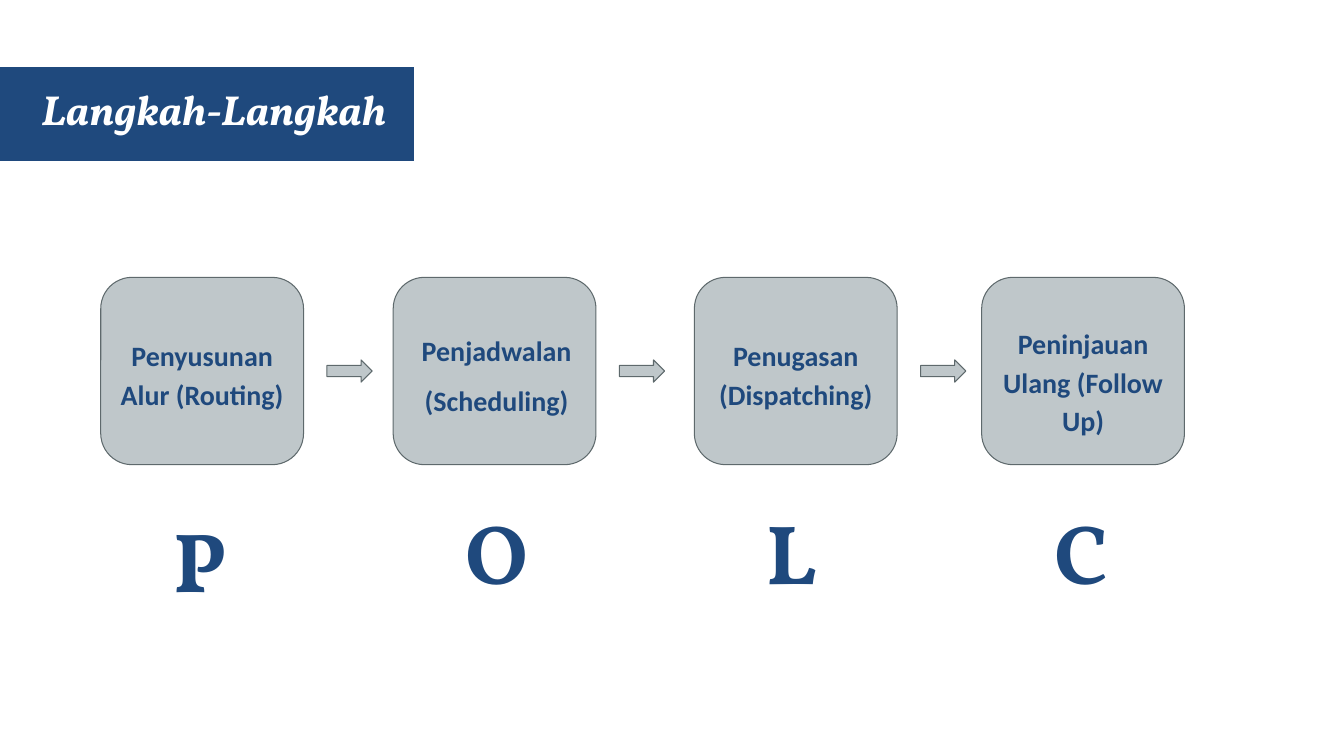
"""Build a slide showing the four production control steps and their POLC letters."""

from dataclasses import dataclass

import pptx
import pptx.dml.color
import pptx.enum.shapes
import pptx.enum.text
import pptx.shapes.autoshape
import pptx.slide
import pptx.text.text
import pptx.util

Cm = pptx.util.Cm
Pt = pptx.util.Pt
RGBColor = pptx.dml.color.RGBColor
ShapeKind = pptx.enum.shapes.MSO_SHAPE
Align = pptx.enum.text.PP_ALIGN
AutoSize = pptx.enum.text.MSO_AUTO_SIZE


@dataclass(frozen=True)
class Theme:
    navy: RGBColor = RGBColor(0x1F, 0x49, 0x7D)
    white: RGBColor = RGBColor(0xFF, 0xFF, 0xFF)
    grey: RGBColor = RGBColor(0xBF, 0xC7, 0xCA)
    outline: RGBColor = RGBColor(0x5E, 0x69, 0x6C)
    display_font: str = "Vollkorn"
    label_font: str = "Calibri"
    title_size: int = 30
    label_size: int = 20
    letter_size: int = 60
    line_width: float = 0.75


@dataclass(frozen=True)
class Box:
    left: float
    top: float
    width: float
    height: float

    def lengths(self) -> tuple[pptx.util.Length, ...]:
        return Cm(self.left), Cm(self.top), Cm(self.width), Cm(self.height)


@dataclass(frozen=True)
class Step:
    left: float
    label: str
    label_top: float
    label_height: float
    letter: str
    letter_top: float = 12.47
    label_shift: float = 0


THEME = Theme()
CARD_TOP, CARD_WIDTH, CARD_HEIGHT = 6.99, 5.11, 4.72
ARROW_SHIFT, LETTER_SHIFT = 5.7, 1.5
STEPS = (
    Step(2.54, "Penyusunan Alur (Routing)", 8.15, 2.36, "P", letter_top=12.67),
    Step(9.91, "Penjadwalan\n(Scheduling)", 8.03, 2.64, "O", label_shift=0.05),
    Step(17.5, "Penugasan (Dispatching)", 8.15, 2.36, "L"),
    Step(24.74, "Peninjauan Ulang (Follow Up)", 7.85, 3.33, "C"),
)


def add_filled_shape(
    slide: pptx.slide.Slide, kind: ShapeKind, box: Box, fill: RGBColor, line: RGBColor
) -> pptx.shapes.autoshape.Shape:
    shape = slide.shapes.add_shape(kind, *box.lengths())
    shape.shadow.inherit = False
    shape.fill.solid()
    shape.fill.fore_color.rgb = fill
    shape.line.color.rgb = line
    shape.line.width = Pt(THEME.line_width)
    return shape


def write_text(
    frame: pptx.text.text.TextFrame, text: str, font_name: str, size: int,
    color: RGBColor, italic: bool = False, inset: tuple[float, float] = (0.33, 0.15),
) -> None:
    frame.text = text
    frame.word_wrap = True
    frame.auto_size = AutoSize.NONE
    frame.vertical_anchor = pptx.enum.text.MSO_ANCHOR.TOP
    frame.margin_left = frame.margin_right = Cm(inset[0])
    frame.margin_top = frame.margin_bottom = Cm(inset[1])
    for paragraph in frame.paragraphs:
        paragraph.alignment = Align.LEFT
        for run in paragraph.runs:
            run.font.name = font_name
            run.font.size = Pt(size)
            run.font.bold = True
            run.font.italic = italic
            run.font.color.rgb = color


def add_title(slide: pptx.slide.Slide) -> None:
    title = slide.shapes.title
    title.left, title.top, title.width, title.height = Box(0.71, 1.96, 17.91, 2.01).lengths()
    write_text(title.text_frame, "Langkah-Langkah", THEME.display_font,
               THEME.title_size, THEME.white, italic=True)
    banner = add_filled_shape(slide, ShapeKind.RECTANGLE, Box(-0.41, 1.68, 10.85, 2.39),
                              THEME.navy, THEME.white)
    title.element.addprevious(banner.element)


def add_label(slide: pptx.slide.Slide, step: Step) -> None:
    box = Box(step.left + step.label_shift, step.label_top, CARD_WIDTH, step.label_height)
    frame = slide.shapes.add_textbox(*box.lengths()).text_frame
    write_text(frame, step.label, THEME.label_font, THEME.label_size, THEME.navy,
               inset=(0.25, 0.25))
    frame.auto_size = AutoSize.SHAPE_TO_FIT_TEXT
    for paragraph in frame.paragraphs:
        paragraph.alignment = Align.CENTER
        paragraph.line_spacing = 1.15
    for paragraph in frame.paragraphs[1:]:
        paragraph.space_before = Pt(8)
    frame.paragraphs[-1].space_after = Pt(8)


def add_step(slide: pptx.slide.Slide, step: Step) -> None:
    card = Box(step.left, CARD_TOP, CARD_WIDTH, CARD_HEIGHT)
    add_filled_shape(slide, ShapeKind.ROUNDED_RECTANGLE, card, THEME.grey, THEME.outline)
    add_label(slide, step)
    letter_box = Box(step.left + LETTER_SHIFT, step.letter_top, 2.11, 3.58)
    letter = slide.shapes.add_textbox(*letter_box.lengths())
    write_text(letter.text_frame, step.letter, THEME.display_font,
               THEME.letter_size, THEME.navy)


def main() -> None:
    presentation = pptx.Presentation()
    presentation.slide_width, presentation.slide_height = Cm(33.87), Cm(19.05)
    slide = presentation.slides.add_slide(presentation.slide_layouts.get_by_name("Title Only"))
    add_title(slide)
    for step in STEPS:
        add_step(slide, step)
    for step in STEPS[:-1]:
        arrow = Box(step.left + ARROW_SHIFT, 9.07, 1.14, 0.56)
        add_filled_shape(slide, ShapeKind.RIGHT_ARROW, arrow, THEME.grey, THEME.outline)
    presentation.save("out.pptx")


if __name__ == "__main__":
    main()
